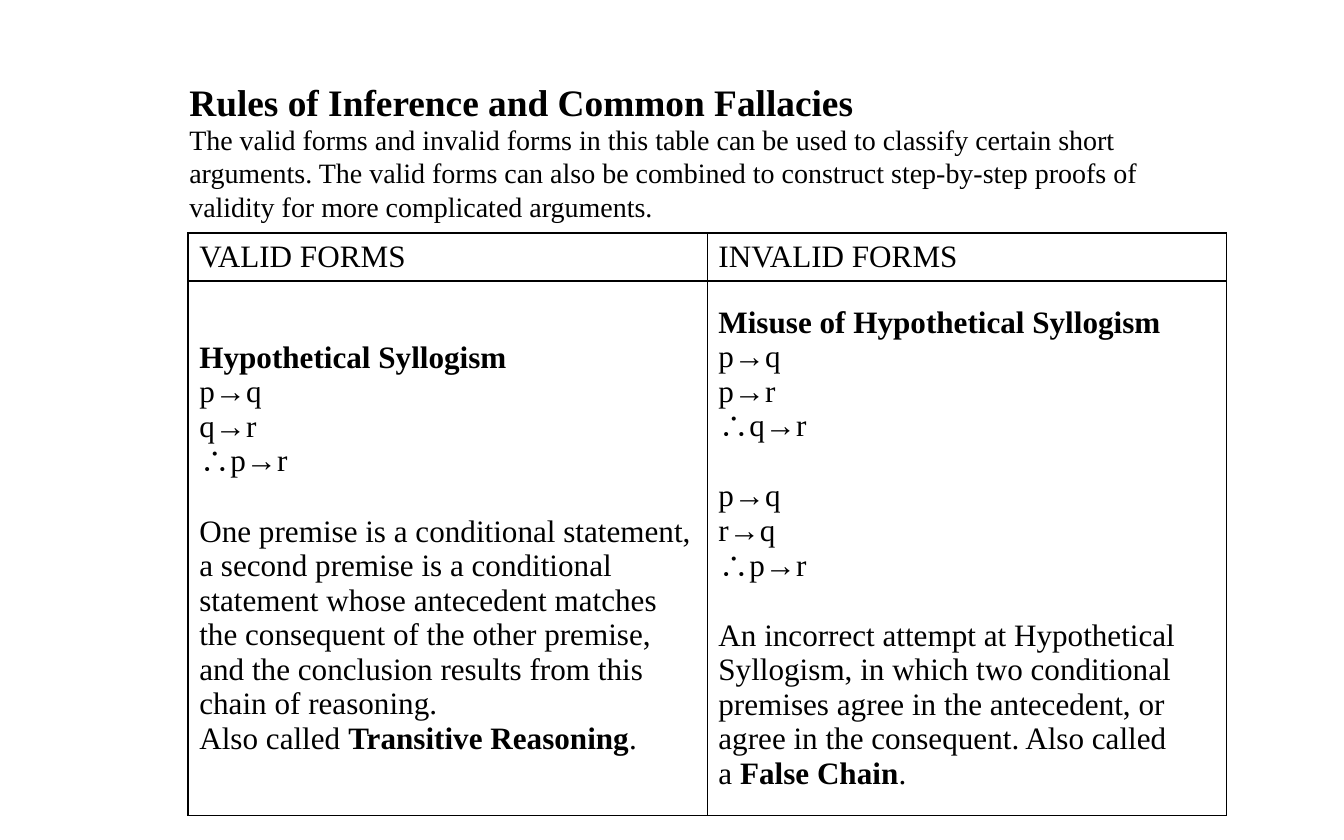
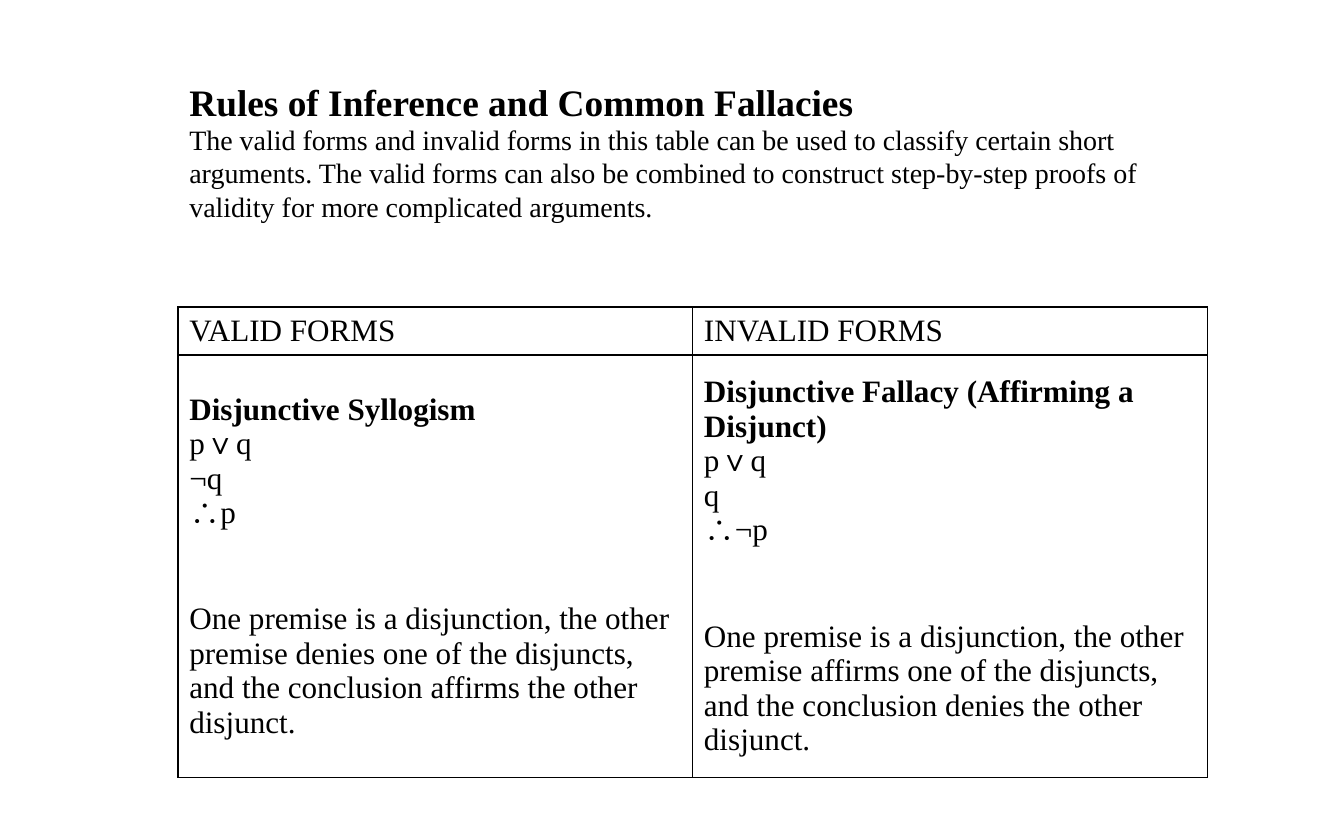
from lxml import etree
from pptx import Presentation
from pptx.dml.color import RGBColor
from pptx.enum.text import MSO_ANCHOR as Anchor, MSO_AUTO_SIZE as AutoSize, PP_ALIGN as Align
from pptx.oxml.ns import qn
from pptx.util import Inches, Pt

INK = "000000"
FONT = "Times New Roman"
HEADING_SIZE, INTRO_SIZE, TABLE_SIZE = 24, 18, 20
BLANK_LINE = 23  # points, one line of table text
BORDER_POINTS = 1

HEADING_BOX = (1.59, 0.66, 9.12, 0.43)
INTRO_BOX = (1.59, 1.09, 9.12, 0.98)
HEADER_ROW_HEIGHT = 0.43

HEADING = "Rules of Inference and Common Fallacies"
INTRO = (
    "The valid forms and invalid forms in this table can be used to classify certain short "
    "arguments. The valid forms can also be combined to construct step-by-step proofs of "
    "validity for more complicated arguments."
)
COLUMN_HEADS = ("VALID FORMS", "INVALID FORMS")

# Each cell is a list of blocks; each block is a list of lines.
# Asterisks switch bold on and off, a tilde is a non-breaking space.
SYLLOGISM_TABLE = {
    "box": (1.68, 2.08, 9.27, 5.2),
    "gap": BLANK_LINE,
    "cells": (
        [
            ["*Hypothetical Syllogism*", "p→q", "q→r", "∴p→r"],
            [
                "One premise is a conditional statement, a second premise is a conditional "
                "statement whose antecedent matches the consequent of the other premise, "
                "and the conclusion results from this chain of reasoning.",
                "Also called~*Transitive Reasoning*.",
            ],
        ],
        [
            ["*Misuse of Hypothetical Syllogism*", "p→q", "p→r", "∴q→r"],
            ["p→q", "r→q", "∴p→r"],
            [
                "An incorrect attempt at Hypothetical Syllogism, in which two conditional "
                "premises agree in the antecedent, or agree in the consequent. "
                "Also called a~*False Chain*."
            ],
        ],
    ),
}
DISJUNCTION_TABLE = {
    "box": (1.59, 2.74, 9.19, 4.2),
    "gap": 2 * BLANK_LINE,
    "cells": (
        [
            ["*Disjunctive Syllogism*", "p∨q", "¬q", "∴p"],
            [
                "One premise is a disjunction, the other premise denies one of the disjuncts, "
                "and the conclusion affirms the other disjunct."
            ],
        ],
        [
            ["*Disjunctive Fallacy (Affirming a Disjunct)*", "p∨q", "q", "∴¬p"],
            [
                "One premise is a disjunction, the other premise affirms one of the disjuncts, "
                "and the conclusion denies the other disjunct."
            ],
        ],
    ),
}


def color(hex_value):
    return RGBColor.from_string(hex_value)


def set_attributes(target, values):
    for name, value in values.items():
        setattr(target, name, value)


def add_run(paragraph, text, size, bold=False):
    run = paragraph.add_run()
    run.text = text
    set_attributes(run.font, {"name": FONT, "size": Pt(size), "bold": bold})
    run.font.color.rgb = color(INK)


def fill_placeholder(placeholder, box, text, size, bold=False):
    left, top, width, height = map(Inches, box)
    set_attributes(placeholder, {"left": left, "top": top, "width": width, "height": height})
    frame = placeholder.text_frame
    set_attributes(frame, {
        "word_wrap": True,
        "auto_size": AutoSize.NONE,
        "vertical_anchor": Anchor.TOP,
        "margin_left": Inches(0.1),
        "margin_right": Inches(0.1),
        "margin_top": Inches(0.05) if bold else 0,
        "margin_bottom": 0,
    })
    paragraph = frame.paragraphs[0]
    set_attributes(paragraph, {"alignment": Align.LEFT, "space_before": Pt(0)})
    properties = paragraph._p.get_or_add_pPr()
    properties.set("marL", "0")
    properties.set("indent", "0")
    etree.SubElement(properties, qn("a:buNone"))
    add_run(paragraph, text, size, bold)


def outline_cell(cell):
    properties = cell._tc.get_or_add_tcPr()
    for side in ("lnL", "lnR", "lnT", "lnB"):
        line = etree.SubElement(properties, qn(f"a:{side}"), w=str(Pt(BORDER_POINTS)))
        fill = etree.SubElement(line, qn("a:solidFill"))
        etree.SubElement(fill, qn("a:srgbClr"), val=INK)


def write_cell(cell, blocks, gap):
    """Write the blocks one line to a paragraph, with a gap before each block but the first."""
    outline_cell(cell)
    cell.fill.background()
    cell.vertical_anchor = Anchor.MIDDLE
    paragraph = cell.text_frame.paragraphs[0]
    for block_index, block in enumerate(blocks):
        for line_index, line in enumerate(block):
            if block_index or line_index:
                paragraph = cell.text_frame.add_paragraph()
            if block_index and not line_index:
                paragraph.space_before = Pt(gap)
            for part_index, part in enumerate(line.replace("~", chr(160)).split("*")):
                if part:
                    add_run(paragraph, part, TABLE_SIZE, bold=part_index % 2 == 1)


def add_forms_table(slide, box, gap, cells):
    left, top, width, height = box
    table = slide.shapes.add_table(2, len(COLUMN_HEADS), *map(Inches, box)).table
    set_attributes(table, {"first_row": False, "horz_banding": False})
    table.rows[0].height = Inches(HEADER_ROW_HEIGHT)
    table.rows[1].height = Inches(height - HEADER_ROW_HEIGHT)
    for index, (head, blocks) in enumerate(zip(COLUMN_HEADS, cells)):
        table.columns[index].width = Inches(width / len(COLUMN_HEADS))
        write_cell(table.cell(0, index), [[head]], gap)
        write_cell(table.cell(1, index), blocks, gap)


def add_rules_slide(presentation, forms):
    slide = presentation.slides.add_slide(presentation.slide_layouts[1])
    fill_placeholder(slide.shapes.title, HEADING_BOX, HEADING, HEADING_SIZE, bold=True)
    fill_placeholder(slide.placeholders[1], INTRO_BOX, INTRO, INTRO_SIZE)
    add_forms_table(slide, **forms)


def main():
    presentation = Presentation()
    set_attributes(presentation, {"slide_width": Inches(12), "slide_height": Inches(7.5)})
    for forms in (SYLLOGISM_TABLE, DISJUNCTION_TABLE):
        add_rules_slide(presentation, forms)
    presentation.save("out.pptx")


if __name__ == "__main__":
    main()
